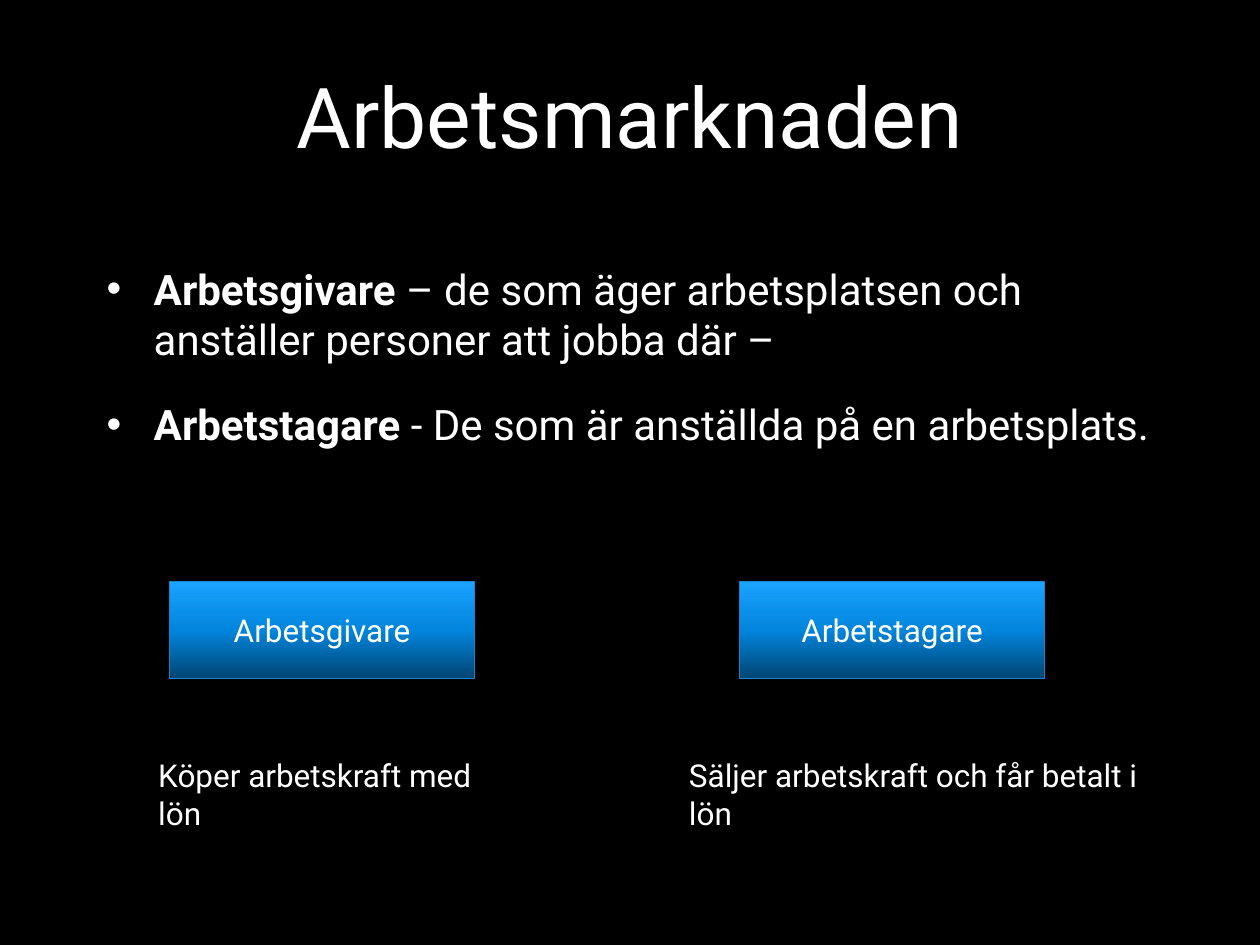
from copy import deepcopy

from lxml import etree
from pptx import Presentation
from pptx.dml.color import RGBColor
from pptx.enum import shapes, text
from pptx.oxml import ns
from pptx.util import Cm, Pt

COLORS = {
    "background": "000000",
    "text": "FFFFFF",
    "outline": "1884CD",
    "bottom": "014573",
    "middle": "0285DD",
    "top": "1AA3FF",
}
FONT = "Roboto"
BULLETS = [
    ("Arbetsgivare ", "– de som äger arbetsplatsen och anställer personer att jobba där –"),
    ("Arbetstagare", " - De som är anställda på en arbetsplats."),
]


def color(name):
    """Return the named palette colour."""
    return RGBColor.from_string(COLORS[name])


def add_run(paragraph, content, size=18, bold=False):
    """Append formatted text to a paragraph."""
    run = paragraph.add_run()
    run.text = content
    run.font.name = FONT
    run.font.size = Pt(size)
    run.font.bold = bold
    run.font.color.rgb = color("text")


def add_frame(slide, left, top, width, height, anchor=text.MSO_ANCHOR.TOP):
    """Add a wrapping text box and return its text frame."""
    frame = slide.shapes.add_textbox(Cm(left), Cm(top), Cm(width), Cm(height)).text_frame
    frame.word_wrap = True
    frame.vertical_anchor = anchor
    return frame


def add_title(slide, left, top, width, height):
    """Place the centred heading."""
    paragraph = add_frame(slide, left, top, width, height, text.MSO_ANCHOR.MIDDLE).paragraphs[0]
    paragraph.alignment = text.PP_ALIGN.CENTER
    add_run(paragraph, "Arbetsmarknaden", size=48)


def add_definitions(slide, left, top, width, height):
    """Place the bulleted definitions."""
    frame = add_frame(slide, left, top, width, height)
    for index, (term, meaning) in enumerate(BULLETS):
        paragraph = frame.add_paragraph() if index else frame.paragraphs[0]
        properties = paragraph._p.get_or_add_pPr()
        properties.set("marL", str(Cm(0.95)))
        properties.set("indent", str(-Cm(0.95)))
        if index:
            paragraph.space_before = Pt(20)
        etree.SubElement(properties, ns.qn("a:buFont"), typeface="Arial")
        etree.SubElement(properties, ns.qn("a:buChar"), char="•")
        add_run(paragraph, term, size=24, bold=True)
        add_run(paragraph, meaning, size=24)


def fill_gradient(shape):
    """Fill a shape with the blue gradient, darkest at the bottom."""
    shape.fill.gradient()
    shape.fill.gradient_angle = 90
    stops = shape._element.spPr.find(".//" + ns.qn("a:gsLst"))
    stops.insert(1, deepcopy(stops[0]))
    for index, stop in enumerate(shape.fill.gradient_stops):
        stop.position = index / 2
        stop.color.rgb = color(("bottom", "middle", "top")[index])


def add_party(slide, left, top, name, role, role_left, role_width):
    """Place a labelled box with its role below; role_left is an offset."""
    shape = slide.shapes.add_shape(
        shapes.MSO_SHAPE.RECTANGLE, Cm(left), Cm(top), Cm(6.15), Cm(1.95))
    shape.shadow.inherit = False
    fill_gradient(shape)
    shape.line.color.rgb = color("outline")
    shape.line.width = Pt(0.5)
    shape.text_frame.vertical_anchor = text.MSO_ANCHOR.MIDDLE
    label = shape.text_frame.paragraphs[0]
    label.alignment = text.PP_ALIGN.CENTER
    add_run(label, name)
    frame = add_frame(slide, left + role_left, top + 3.38, role_width, 1.02)
    add_run(frame.paragraphs[0], role)


def main():
    """Build and save the presentation."""
    presentation = Presentation()
    presentation.slide_width, presentation.slide_height = Cm(25.4), Cm(19.05)
    slide = presentation.slides.add_slide(presentation.slide_layouts[6])
    slide.background.fill.solid()
    slide.background.fill.fore_color.rgb = color("background")
    add_title(slide, 1.9, 0.33, 21.6, 3.96)
    add_definitions(slide, 1.9, 5.18, 21.6, 11.84)
    add_party(slide, 3.42, 11.73, "Arbetsgivare", "Köper arbetskraft med lön", -0.48, 7.32)
    add_party(slide, 14.91, 11.73, "Arbetstagare", "Säljer arbetskraft och får betalt i lön",
              -1.27, 9.83)
    presentation.save("out.pptx")


if __name__ == "__main__":
    main()
